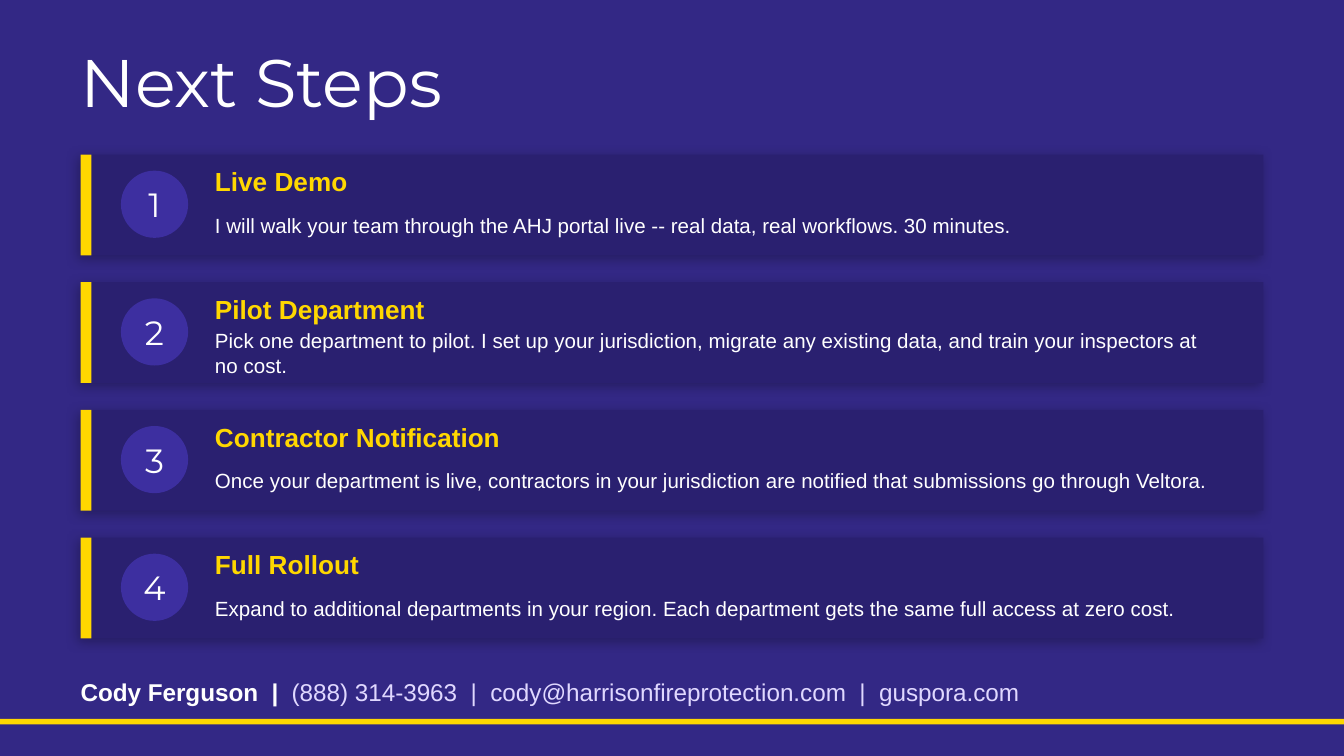
from pptx import Presentation
from pptx.dml.color import RGBColor as RGB
from pptx.enum.shapes import MSO_SHAPE as SHAPE
from pptx.enum.text import MSO_ANCHOR as ANCHOR, PP_ALIGN as ALIGN
from pptx.oxml import parse_xml
from pptx.oxml.ns import nsdecls, qn
from pptx.util import Inches, Pt

COLORS = {"page": "332885", "card": "2A2070", "badge": "3D2FA0",
          "gold": "FFD700", "white": "FFFFFF", "lilac": "E0D8FF"}
SHADOW = f"""<a:effectLst {nsdecls('a')}>
  <a:outerShdw blurRad="{Pt(6)}" dist="{Pt(2)}" dir="8100000" algn="bl" rotWithShape="0">
    <a:srgbClr val="000000"><a:alpha val="25000"/></a:srgbClr>
  </a:outerShdw></a:effectLst>"""

# Grid: a 16:9 page, one left margin, four equal rows
WIDTH = 10
HEIGHT = WIDTH * 9 / 16
MARGIN, BADGE_LEFT, TEXT_LEFT = 0.6, 0.9, 1.6
FIRST_ROW, ROW_STEP, ROW_HEIGHT = 1.15, 0.95, 0.75
BADGE_SIZE = 0.5

STEPS = [
    ("Live Demo", "I will walk your team through the AHJ portal live -- real data, "
     "real workflows. 30 minutes."),
    ("Pilot Department", "Pick one department to pilot. I set up your jurisdiction, "
     "migrate any existing data, and train your inspectors at no cost."),
    ("Contractor Notification", "Once your department is live, contractors in your "
     "jurisdiction are notified that submissions go through Veltora."),
    ("Full Rollout", "Expand to additional departments in your region. Each department "
     "gets the same full access at zero cost."),
]

prs = Presentation()
prs.slide_width, prs.slide_height = Inches(WIDTH), Inches(HEIGHT)
slide = prs.slides.add_slide(prs.slide_layouts[6])
slide.background.fill.solid()
slide.background.fill.fore_color.rgb = RGB.from_string(COLORS["page"])


def add_block(kind, left, top, width, height, color):
    block = slide.shapes.add_shape(kind, *map(Inches, (left, top, width, height)))
    block.shadow.inherit = False
    block.fill.solid()
    block.fill.fore_color.rgb = RGB.from_string(COLORS[color])
    block.line.fill.background()
    return block


def add_text(text, left, top, width, height, size, color="white",
             font="Arial", bold=False, align=ALIGN.LEFT):
    frame = slide.shapes.add_textbox(*map(Inches, (left, top, width, height))).text_frame
    frame.word_wrap = True
    frame.vertical_anchor = ANCHOR.MIDDLE
    frame.margin_left = frame.margin_right = frame.margin_top = frame.margin_bottom = 0
    paragraph = frame.paragraphs[0]
    paragraph.add_run().text = text
    paragraph.alignment = align
    paragraph.font.size, paragraph.font.name = Pt(size), font
    paragraph.font.bold = bold
    paragraph.font.color.rgb = RGB.from_string(COLORS[color])
    return paragraph


# Bottom rule and title
add_block(SHAPE.RECTANGLE, 0, 5.35, WIDTH, 0.04, "gold")
add_text("Next Steps", MARGIN, 0.3, 9, 0.6, 36, font="Montserrat")

# Step cards
for number, (heading, detail) in enumerate(STEPS, start=1):
    top = FIRST_ROW + (number - 1) * ROW_STEP
    card = add_block(SHAPE.RECTANGLE, MARGIN, top, WIDTH - 2 * MARGIN, ROW_HEIGHT, "card")
    effects = card._element.spPr.find(qn("a:effectLst"))
    effects.getparent().replace(effects, parse_xml(SHADOW))
    add_block(SHAPE.RECTANGLE, MARGIN, top, 0.08, ROW_HEIGHT, "gold")

    badge = (BADGE_LEFT, top + 0.12, BADGE_SIZE, BADGE_SIZE)
    add_block(SHAPE.OVAL, *badge, "badge")
    add_text(str(number), *badge, 18, font="Montserrat", align=ALIGN.CENTER)
    add_text(heading, TEXT_LEFT, top + 0.05, 3, 0.3, 14, "gold", bold=True)
    add_text(detail, TEXT_LEFT, top + 0.35, 7.5, 0.35, 11)

# Contact line
contact = add_text("Cody Ferguson  |  ", MARGIN, 5, 9, 0.3, 13, bold=True)
details = contact.add_run()
details.text = "(888) 314-3963  |  cody@harrisonfireprotection.com  |  guspora.com"
details.font.bold = False
details.font.color.rgb = RGB.from_string(COLORS["lilac"])

prs.save("out.pptx")
